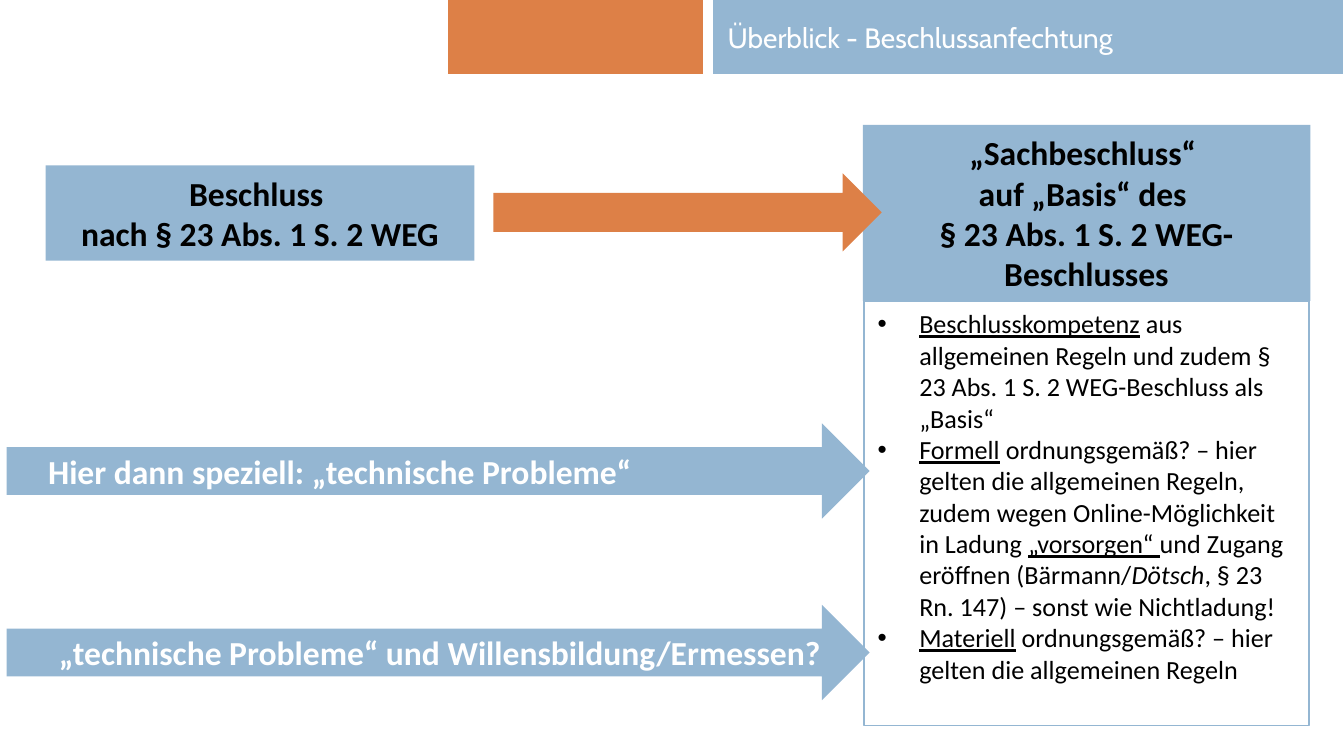
from lxml import etree
from pptx import Presentation
from pptx import util as u
from pptx.dml.color import RGBColor
from pptx.enum import shapes, text
from pptx.oxml.ns import qn

BLUE, ORANGE, WHITE, BLACK = "94B6D2", "DD8047", "FFFFFF", "000000"
COLS, ROWS = 100, 56.25  # grid of the slide
UNIT = u.Inches(0.1)     # one column or row


def grid(*vals):
    return [round(v * UNIT) for v in vals]


def paint(part, color):
    part.fill.solid()
    part.fill.fore_color.rgb = RGBColor.from_string(color)


def style(run, size, color, bold=False, face="Calibri"):
    font = run.font
    font.name, font.size, font.bold = face, u.Pt(size), bold
    font.color.rgb = RGBColor.from_string(color)


def edge(cell, side, color, width):
    # cell borders must come before the fill
    line = etree.Element(qn("a:" + side), w=str(u.Pt(width)))
    fill = etree.SubElement(line, qn("a:solidFill"))
    etree.SubElement(fill, qn("a:srgbClr"), val=color)
    cell._tc.get_or_add_tcPr().insert(0, line)


def block(parent, kind, box, color):
    shape = parent.add_shape(kind, *grid(*box))
    shape.shadow.inherit = False
    paint(shape, color)
    shape.line.fill.background()
    return shape


# Header band: accent cell and title cell
def header(slide, box, split):
    table = slide.shapes.add_table(1, 2, *grid(*box)).table
    table.first_row = table.horz_banding = False
    for col, width in zip(table.columns, grid(split, box[2] - split)):
        col.width = width
    left, right = table.cell(0, 0), table.cell(0, 1)
    for cell, color, side in ((left, ORANGE, "lnR"), (right, BLUE, "lnL")):
        paint(cell, color)
        edge(cell, side, WHITE, 6)
    right.vertical_anchor = text.MSO_ANCHOR.MIDDLE
    right.margin_left, right.margin_right = grid(1.5, 0.8)
    right.margin_top = right.margin_bottom = 0
    right.text = "Überblick - Beschlussanfechtung"
    para = right.text_frame.paragraphs[0]
    para.alignment = text.PP_ALIGN.JUSTIFY
    para.line_spacing = 1.15
    style(para.runs[0], 15, WHITE, face="Cabin")


# Blue box with a centred bold heading
def heading(slide, box, words):
    frame = block(slide.shapes, shapes.MSO_SHAPE.RECTANGLE, box, BLUE).text_frame
    frame.word_wrap = True
    frame.text = words
    for para in frame.paragraphs:
        para.alignment = text.PP_ALIGN.CENTER
        style(para.runs[0], 18, BLACK, True)


# Framed list; each item holds (words, mark) parts, mark is "", "u" or "i"
def listing(slide, box, items):
    body = slide.placeholders[1]
    body.left, body.top, body.width, body.height = grid(*box)
    body.line.color.rgb = RGBColor.from_string(BLUE)
    body.line.width = u.Pt(0.75)
    frame = body.text_frame
    frame.auto_size = text.MSO_AUTO_SIZE.NONE
    frame.vertical_anchor = text.MSO_ANCHOR.TOP
    for n, item in enumerate(items):
        para = frame.add_paragraph() if n else frame.paragraphs[0]
        para.space_before = u.Pt(0)
        props = para._p.get_or_add_pPr()
        indent = u.Inches(0.31)
        props.set("marL", str(indent))
        props.set("indent", str(-indent))
        etree.SubElement(props, qn("a:buFont"), typeface="Arial")
        etree.SubElement(props, qn("a:buChar"), char="•")
        for words, mark in item:
            run = para.add_run()
            run.text = words
            style(run, 14, BLACK)
            run.font.underline = mark == "u"
            run.font.italic = mark == "i"


# Wide arrow grouped with its label
def banner(slide, box, inset, width, words):
    x, y, _, high = box
    group = slide.shapes.add_group_shape().shapes
    block(group, shapes.MSO_SHAPE.RIGHT_ARROW, box, BLUE)
    tall = 4
    label = group.add_textbox(*grid(x + inset, y + (high - tall) / 2, width, tall))
    frame = label.text_frame
    frame.word_wrap = False
    frame.text = words
    style(frame.paragraphs[0].runs[0], 18, WHITE, True)


def main():
    deck = Presentation()
    deck.slide_width, deck.slide_height = grid(COLS, ROWS)
    slide = deck.slides.add_slide(deck.slide_layouts[1])
    title = slide.shapes.title._element
    title.getparent().remove(title)

    header(slide, (33.3, -0.2, 66.7, 5.8), 19.35)

    # From the resolution to the decision on the matter
    heading(slide, (3.4, 12.3, 31.9, 7.1), "Beschluss \nnach § 23 Abs. 1 S. 2 WEG")
    heading(slide, (64.2, 9.3, 33.3, 13.1),
            "„Sachbeschluss“ \nauf „Basis“ des \n§ 23 Abs. 1 S. 2 WEG-\nBeschlusses")
    block(slide.shapes, shapes.MSO_SHAPE.RIGHT_ARROW, (36.7, 12.9, 28.9, 5.8), ORANGE)

    listing(slide, (64.3, 22.4, 33.1, 31.6), [
        [("Beschlusskompetenz", "u"),
         (" aus allgemeinen Regeln und zudem § 23 Abs. 1 S. 2 WEG-Beschluss als „Basis“", "")],
        [("Formell", "u"),
         (" ordnungsgemäß? – hier gelten die allgemeinen Regeln, zudem wegen "
          "Online-Möglichkeit in Ladung ", ""),
         ("„vorsorgen“ ", "u"), ("und Zugang eröffnen (Bärmann/", ""),
         ("Dötsch", "i"), (", § 23 Rn. 147) – sonst wie Nichtladung!", "")],
        [("Materiell", "u"),
         (" ordnungsgemäß? – hier gelten die allgemeinen Regeln", "")],
    ])

    # Special questions pointing at the list
    notes = ((2.1, 46.3, "Hier dann speziell: „technische Probleme“"),
             (2.9, 59.1, "„technische Probleme“ und Willensbildung/Ermessen?"))
    for n, (inset, width, words) in enumerate(notes):
        banner(slide, (0.5, 31.5 + 13.5 * n, 64.2, 7.1), inset, width, words)

    deck.save("out.pptx")


if __name__ == "__main__":
    main()
